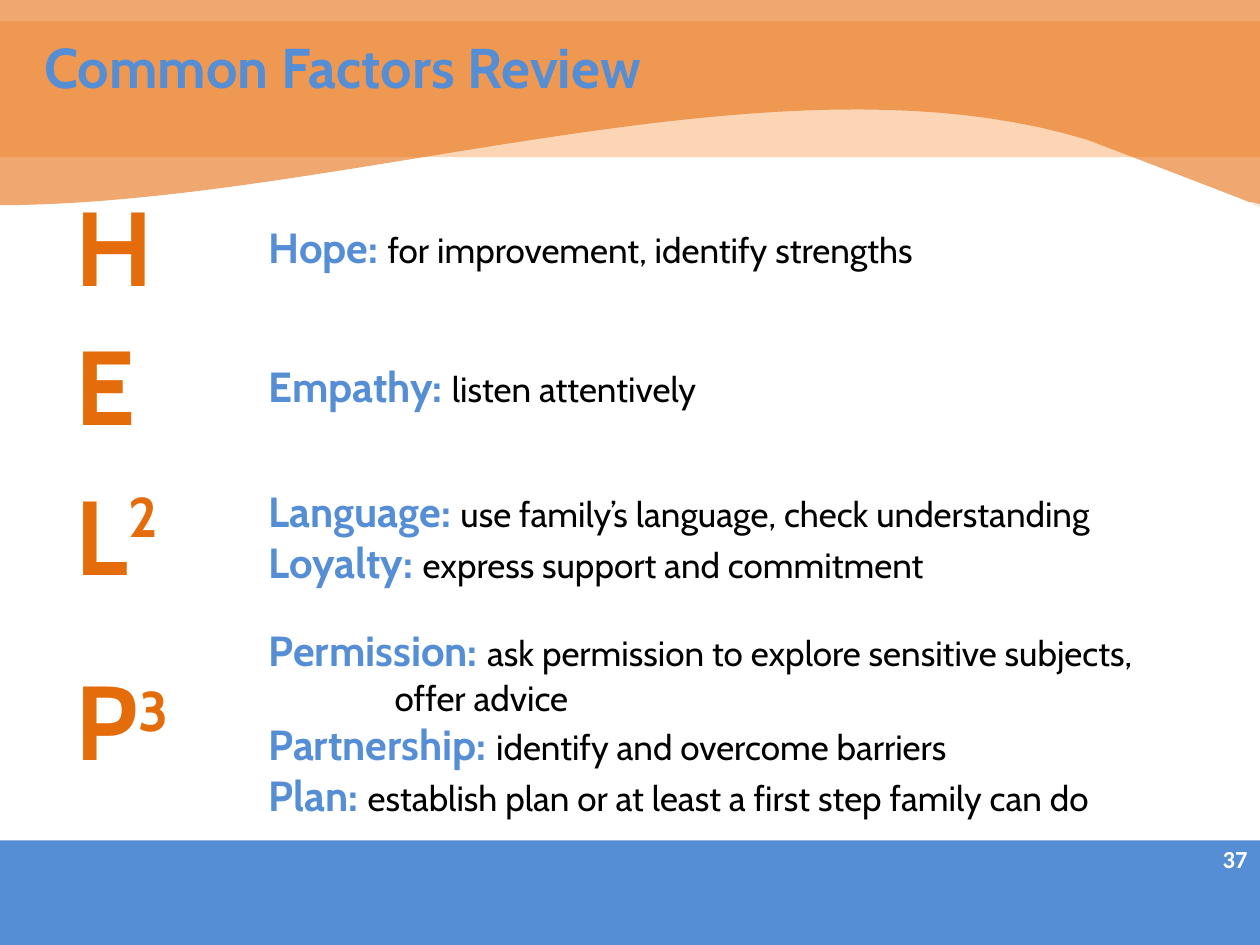
"""Build the Common Factors Review slide."""
from lxml import etree
from pptx import Presentation, util as u
from pptx.dml.color import RGBColor
from pptx.enum import shapes, text
from pptx.oxml import ns

BLUE = RGBColor(0x55, 0x8E, 0xD5)
ORANGE = RGBColor(0xE4, 0x6C, 0x0A)
PEACH = RGBColor(0xFC, 0xD5, 0xB5)
BLACK = RGBColor(0, 0, 0)
WHITE = RGBColor(0xFF, 0xFF, 0xFF)

TITLE = {"size": 32, "color": BLUE, "bold": True}
LETTER = {"size": 60, "color": ORANGE, "bold": True}
POWER = {"size": 55, "color": ORANGE, "bold": True}
TERM = {"size": 24, "color": BLUE, "bold": True}
DETAIL = {"size": 20, "color": BLACK, "bold": False}
NUMBER = {"size": 14, "color": WHITE, "bold": True, "name": "Calibri"}

PLAIN_TABLE = "{2D5ABB26-0587-4C30-8999-92F81FD0307C}"
WAVE_START = (-0.08, 4.14)
WAVE_CURVES = [
    ((6.86, 4.14), (15.6, 0.89), (21.92, 2.82)),
    ((28.19, 5.21), (24.23, 3.76), (25.45, 4.14)),
]
ROWS = [
    (2.34, "H", "", 0, [("Hope: ", "for improvement, identify strengths")]),
    (1.63, "E", "", 0, [("Empathy: ", "listen attentively")]),
    (3.3, "L", "2", 40, [
        ("Language: ", "use family’s language, check understanding"),
        ("Loyalty: ", "express support and commitment"),
    ]),
    (3.56, "P", "3", 30, [
        ("Permission: ", "ask permission to explore sensitive subjects, \v\toffer advice"),
        ("Partnership: ", "identify and overcome barriers"),
        ("Plan: ", "establish plan or at least a first step family can do"),
    ]),
]


def curve_points(start, curves, steps=40):
    """Return points along a chain of cubic curves."""
    points = [start]
    for first, second, end in curves:
        origin = points[-1]
        for step in range(1, steps + 1):
            t = step / steps
            weights = ((1 - t) ** 3, 3 * t * (1 - t) ** 2, 3 * t * t * (1 - t), t ** 3)
            corners = (origin, first, second, end)
            points.append(tuple(
                sum(weight * corner[axis] for weight, corner in zip(weights, corners))
                for axis in (0, 1)))
    return points


class SlideBuilder:
    """Hold the font and the current slide, and add elements to it."""

    def __init__(self, slide, font_name):
        self.slide = slide
        self.font_name = font_name

    def paint(self, shape, color, opacity=100):
        """Fill a shape without line or shadow."""
        shape.shadow.inherit = False
        shape.fill.solid()
        shape.fill.fore_color.rgb = color
        shape.line.fill.background()
        if opacity < 100:
            color_element = shape.fill._xPr.find(".//" + ns.qn("a:srgbClr"))
            alpha = etree.SubElement(color_element, ns.qn("a:alpha"))
            alpha.set("val", str(opacity * 1000))

    def band(self, box, color):
        """Add a plain rectangle."""
        shape = self.slide.shapes.add_shape(
            shapes.MSO_SHAPE.RECTANGLE, *map(u.Cm, box))
        self.paint(shape, color)

    def outline(self, points, color, opacity):
        """Add a closed freeform."""
        start, *others = [(u.Cm(x), u.Cm(y)) for x, y in points]
        builder = self.slide.shapes.build_freeform(*start, scale=1.0)
        builder.add_line_segments(others, close=True)
        self.paint(builder.convert_to_shape(), color, opacity)

    def run(self, paragraph, words, style, raised=0):
        """Add styled words to a paragraph."""
        for index, line in enumerate(words.split("\v")):
            if index:
                paragraph.add_line_break()
            run = paragraph.add_run()
            run.text = line
            values = {"name": self.font_name, **style}
            run.font.color.rgb = values.pop("color")
            values["size"] = u.Pt(values["size"])
            for name, value in values.items():
                setattr(run.font, name, value)
            if raised:
                run._r.get_or_add_rPr().set("baseline", str(raised * 1000))

    def label(self, box, words, style, **layout):
        """Add a text box with one paragraph."""
        frame = self.slide.shapes.add_textbox(*map(u.Cm, box)).text_frame
        frame.word_wrap = True
        frame.vertical_anchor = layout.get("anchor", text.MSO_ANCHOR.TOP)
        paragraph = frame.paragraphs[0]
        paragraph.alignment = layout.get("align", text.PP_ALIGN.LEFT)
        self.run(paragraph, words, style)

    def tab_stop(self, paragraph, position):
        """Add a left tab stop to a paragraph."""
        tabs = etree.SubElement(paragraph._p.get_or_add_pPr(), ns.qn("a:tabLst"))
        tab = etree.SubElement(tabs, ns.qn("a:tab"))
        tab.set("pos", str(u.Cm(position)))
        tab.set("algn", "l")

    def table(self, left, top, widths, rows):
        """Add the table of letters and their terms."""
        box = (left, top, sum(widths), sum(row[0] for row in rows))
        table = self.slide.shapes.add_table(
            len(rows), len(widths), *map(u.Cm, box)).table
        table.first_row = table.horz_banding = False
        table._tbl.tblPr.find(ns.qn("a:tableStyleId")).text = PLAIN_TABLE
        for column, width in zip(table.columns, widths):
            column.width = u.Cm(width)
        for row, (height, letter, power, raised, entries) in zip(table.rows, rows):
            row.height = u.Cm(height)
            for cell in row.cells:
                cell.fill.background()
                cell.vertical_anchor = text.MSO_ANCHOR.MIDDLE
            letter_cell, entry_cell = row.cells
            paragraph = letter_cell.text_frame.paragraphs[0]
            self.run(paragraph, letter, LETTER)
            if power:
                self.run(paragraph, power, POWER, raised)
            frame = entry_cell.text_frame
            for index, (term, detail) in enumerate(entries):
                paragraph = frame.add_paragraph() if index else frame.paragraphs[0]
                if "\t" in detail:
                    self.tab_stop(paragraph, 2.54)
                self.run(paragraph, term, TERM)
                self.run(paragraph, detail, DETAIL)


def main():
    """Build and save the presentation."""
    presentation = Presentation()
    presentation.slide_width = u.Cm(25.4)
    presentation.slide_height = u.Cm(19.05)
    slide = presentation.slides.add_slide(presentation.slide_layouts[6])
    builder = SlideBuilder(slide, "Cabin")
    builder.band((-0.03, 0.43, 25.48, 2.74), PEACH)
    wave = [(25.45, 0), (-0.08, 0)] + curve_points(WAVE_START, WAVE_CURVES)
    builder.outline(wave, ORANGE, 58)
    builder.band((-0.03, 16.94, 25.65, 2.34), BLUE)
    builder.label((0.64, 0.53, 22.15, 2.64), "Common Factors Review", TITLE)
    builder.table(1.27, 3.61, (3.89, 20.24), ROWS)
    builder.label((19.48, 16.81, 5.92, 1.02), "37", NUMBER,
                  anchor=text.MSO_ANCHOR.MIDDLE, align=text.PP_ALIGN.RIGHT)
    presentation.save("out.pptx")


if __name__ == "__main__":
    main()
